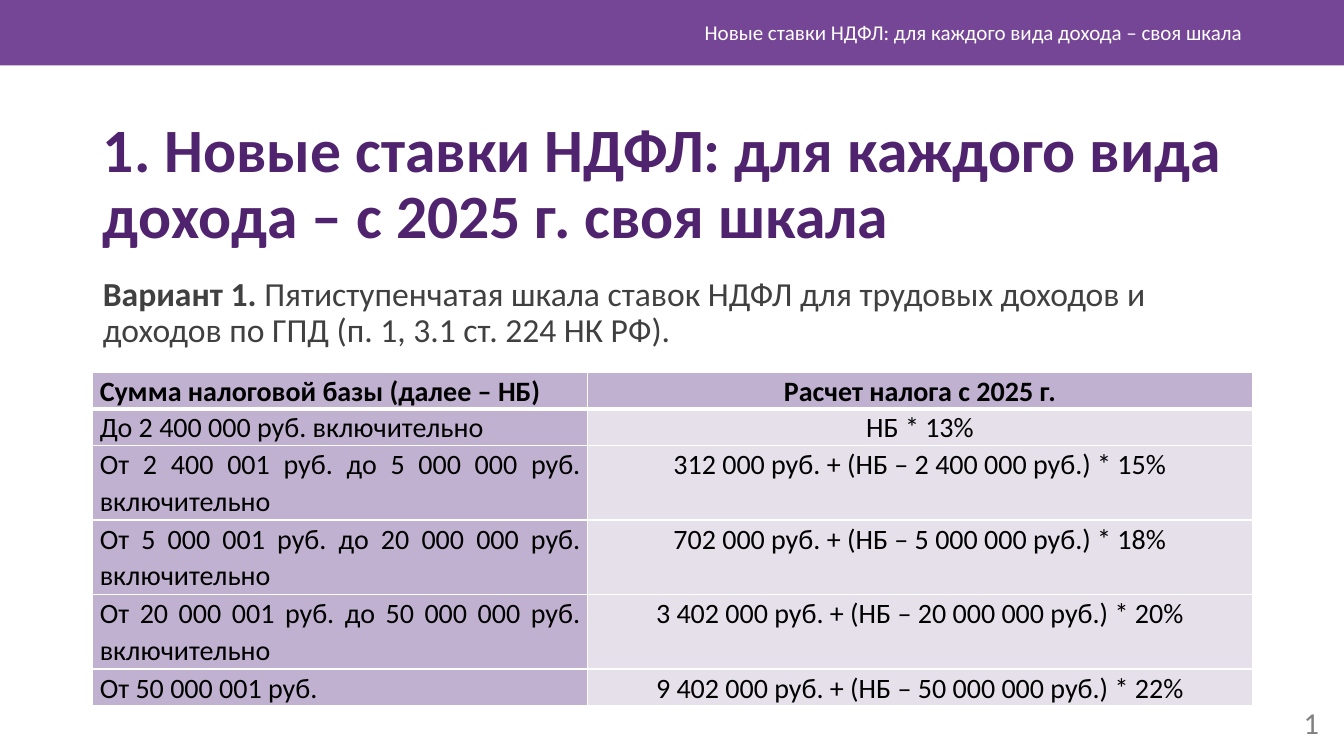
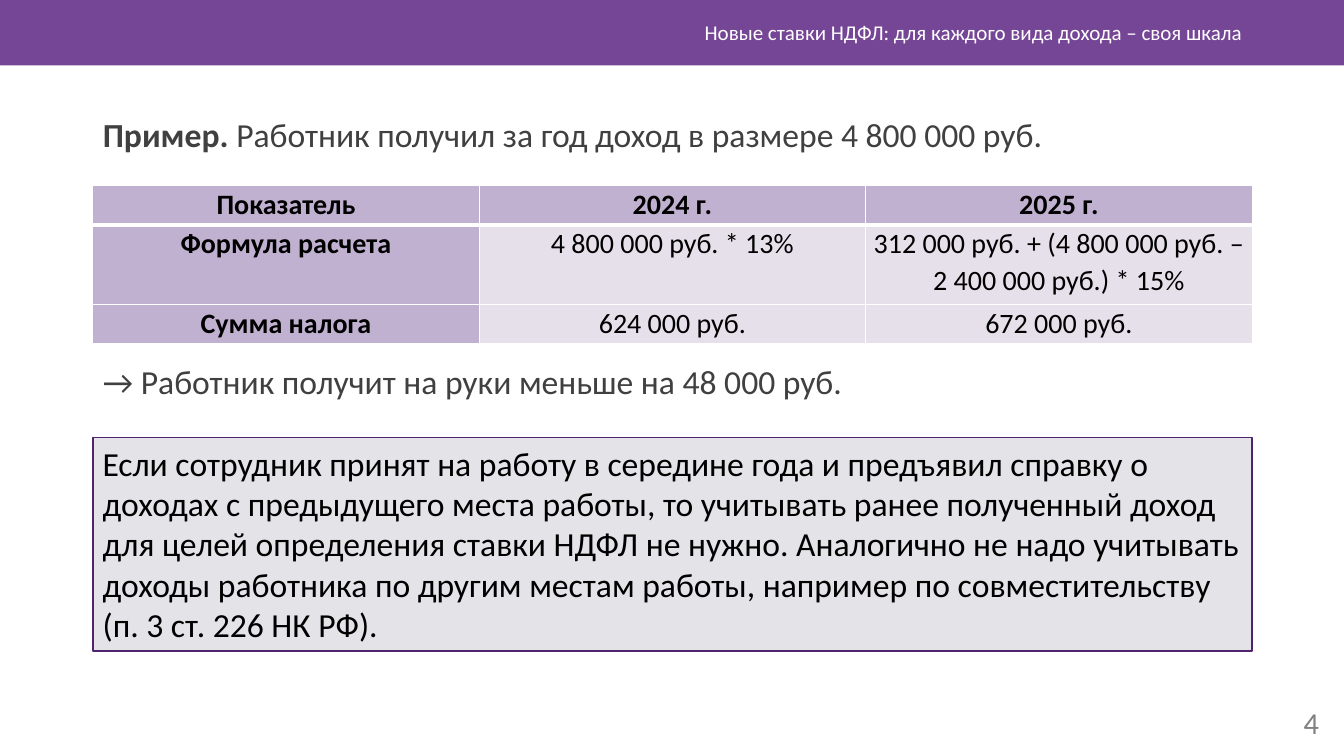
from lxml.etree import SubElement
from pptx import Presentation
from pptx.dml.color import RGBColor
from pptx.enum.shapes import MSO_SHAPE
from pptx.enum.text import MSO_ANCHOR, MSO_AUTO_SIZE, PP_ALIGN
from pptx.oxml.ns import qn
from pptx.util import Inches, Pt

FONT = "Calibri"
BAND, DEEP, HEAD, CELL = "764696", "50236E", "C1B1D1", "E6E0EB"
NOTE, TEXT, GREY, BLACK, WHITE = "E4E4E8", "404040", "808080", "000000", "FFFFFF"
LEFT, WIDTH, TOP = 0.92, 11.5, 1.13
CENTER, RIGHT = PP_ALIGN.CENTER, PP_ALIGN.RIGHT
HEADER = "Новые ставки НДФЛ: для каждого вида дохода – своя шкала"

# Runs are (text, bold) pairs
SLIDES = [
    {
        "number": "1",
        "title": [("1. Новые ставки НДФЛ: для каждого вида дохода – с 2025 г. своя шкала", True)],
        "title_look": (44, DEEP, 1.42),
        "body": [
            ("Вариант 1. ", True),
            ("Пятиступенчатая шкала ставок НДФЛ для трудовых доходов и "
             "доходов по ГПД (п. 1, 3.1 ст. 224 НК РФ).", False),
        ],
        "body_box": (2.7, 0.85),
        "table": {
            "top": 3.69,
            "cols": [4.91, 6.59],
            "heights": [0.36, 0.36, 0.74, 0.74, 0.74, 0.36],
            "side_align": PP_ALIGN.JUSTIFY,
            "side_bold": False,
            "rows": [
                ("Сумма налоговой базы (далее – НБ)", "Расчет налога с 2025 г."),
                ("До 2 400 000 руб. включительно", "НБ * 13%"),
                ("От 2 400 001 руб. до 5 000 000 руб. включительно",
                 "312 000 руб. + (НБ – 2 400 000 руб.) * 15%"),
                ("От 5 000 001 руб. до 20 000 000 руб. включительно",
                 "702 000 руб. + (НБ – 5 000 000 руб.) * 18%"),
                ("От 20 000 001 руб. до 50 000 000 руб. включительно",
                 "3 402 000 руб. + (НБ – 20 000 000 руб.) * 20%"),
                ("От 50 000 001 руб.", "9 402 000 руб. + (НБ – 50 000 000 руб.) * 22%"),
            ],
        },
    },
    {
        "number": "4",
        "title": [
            ("Пример. ", True),
            ("Работник получил за год доход в размере 4 800 000 руб.", False),
        ],
        "title_look": (24, TEXT, 0.5),
        "body": [("→ Работник получит на руки меньше на 48 000 руб.", False)],
        "body_box": (3.58, 0.5),
        "table": {
            "top": 1.84,
            "cols": [WIDTH / 3] * 3,
            "heights": [0.39, 0.79, 0.39],
            "side_align": CENTER,
            "side_bold": True,
            "rows": [
                ("Показатель", "2024 г.", "2025 г."),
                ("Формула расчета", "4 800 000 руб. * 13%",
                 "312 000 руб. + (4 800 000 руб. – 2 400 000 руб.) * 15%"),
                ("Сумма налога", "624 000 руб.", "672 000 руб."),
            ],
        },
        "note": "Если сотрудник принят на работу в середине года и предъявил справку о "
                "доходах с предыдущего места работы, то учитывать ранее полученный доход "
                "для целей определения ставки НДФЛ не нужно. Аналогично не надо учитывать "
                "доходы работника по другим местам работы, например по совместительству "
                "(п. 3 ст. 226 НК РФ).",
    },
]


def color(code):
    return RGBColor.from_string(code)


def write(frame, runs, size, ink, align=PP_ALIGN.LEFT, spacing=1.0):
    """Fill the first paragraph of a frame, run by run, without a bullet."""
    para = frame.paragraphs[0]
    props = para._p.get_or_add_pPr()
    props.set("marL", "0")
    props.set("indent", "0")
    SubElement(props, qn("a:buNone"))
    para.alignment = align
    para.line_spacing = spacing
    para.space_before = Pt(0)
    for text, bold in runs:
        run = para.add_run()
        run.text = text
        font = run.font
        font.name, font.size, font.bold = FONT, Pt(size), bold
        font.color.rgb = color(ink)


def place(shape, left, top, width, height, anchor=MSO_ANCHOR.TOP):
    shape.left, shape.top = Inches(left), Inches(top)
    shape.width, shape.height = Inches(width), Inches(height)
    frame = shape.text_frame
    frame.word_wrap = True
    frame.auto_size = MSO_AUTO_SIZE.NONE
    frame.vertical_anchor = anchor
    return frame


def add_label(slide, text, box, size, ink):
    shape = slide.shapes.add_textbox(0, 0, 0, 0)
    write(place(shape, *box, MSO_ANCHOR.MIDDLE), [(text, False)], size, ink, RIGHT)


def add_rect(slide, box, fill, line=None):
    shape = slide.shapes.add_shape(MSO_SHAPE.RECTANGLE, *map(Inches, box))
    shape.shadow.inherit = False
    shape.fill.solid()
    shape.fill.fore_color.rgb = color(fill)
    if line:
        shape.line.color.rgb = color(line)
        shape.line.width = Pt(1.25)
    else:
        shape.line.fill.background()
    return shape


def set_borders(cell, top, bottom):
    """Draw white cell borders; the side ones are 1 pt wide."""
    props = cell._tc.get_or_add_tcPr()
    for at, (side, width) in enumerate(zip("LRTB", (1, 1, top, bottom))):
        line = SubElement(props, qn(f"a:ln{side}"), w=str(Pt(width)))
        SubElement(SubElement(line, qn("a:solidFill")), qn("a:srgbClr"), val=WHITE)
        props.insert(at, line)


def add_grid(slide, data):
    rows, cols, heights = data["rows"], data["cols"], data["heights"]
    box = (LEFT, data["top"], WIDTH, sum(heights))
    table = slide.shapes.add_table(len(rows), len(cols), *map(Inches, box)).table
    table.horz_banding = False
    for col, width in zip(table.columns, cols):
        col.width = Inches(width)
    for r, (texts, height) in enumerate(zip(rows, heights)):
        table.rows[r].height = Inches(height)
        for c, text in enumerate(texts):
            cell = table.cell(r, c)
            cell.margin_left = cell.margin_right = Inches(0.07)
            cell.margin_top = cell.margin_bottom = 0
            cell.fill.solid()
            cell.fill.fore_color.rgb = color(CELL if r and c else HEAD)
            set_borders(cell, 3 if r == 1 else 1, 3 if r == 0 else 1)
            bold = r == 0 or (c == 0 and data["side_bold"])
            align = CENTER if c else data["side_align"]
            write(cell.text_frame, [(text, bold)], 20, BLACK, align, 1.07)


def add_slide(deck, data):
    slide = deck.slides.add_slide(deck.slide_layouts[1])
    title, body = slide.placeholders
    add_rect(slide, (0, 0, 13.33, 0.65), BAND)
    add_label(slide, HEADER, (3.54, 0.12, 8.88, 0.4), 15, WHITE)
    add_label(slide, data["number"], (12.51, 6.97, 0.67, 0.4), 21.7, GREY)

    size, ink, height = data["title_look"]
    write(place(title, LEFT, TOP, WIDTH, height), data["title"], size, ink, spacing=0.9)
    top, height = data["body_box"]
    write(place(body, LEFT, top, WIDTH, height), data["body"], 24, TEXT, spacing=0.9)
    add_grid(slide, data["table"])
    if "note" in data:
        box = (LEFT, 4.34, WIDTH, 2.12)
        note = add_rect(slide, box, NOTE, DEEP)
        write(place(note, *box), [(data["note"], False)], 24, BLACK)


def main():
    deck = Presentation()
    deck.slide_width, deck.slide_height = Inches(13.33), Inches(7.5)
    for data in SLIDES:
        add_slide(deck, data)
    deck.save("out.pptx")


if __name__ == "__main__":
    main()
